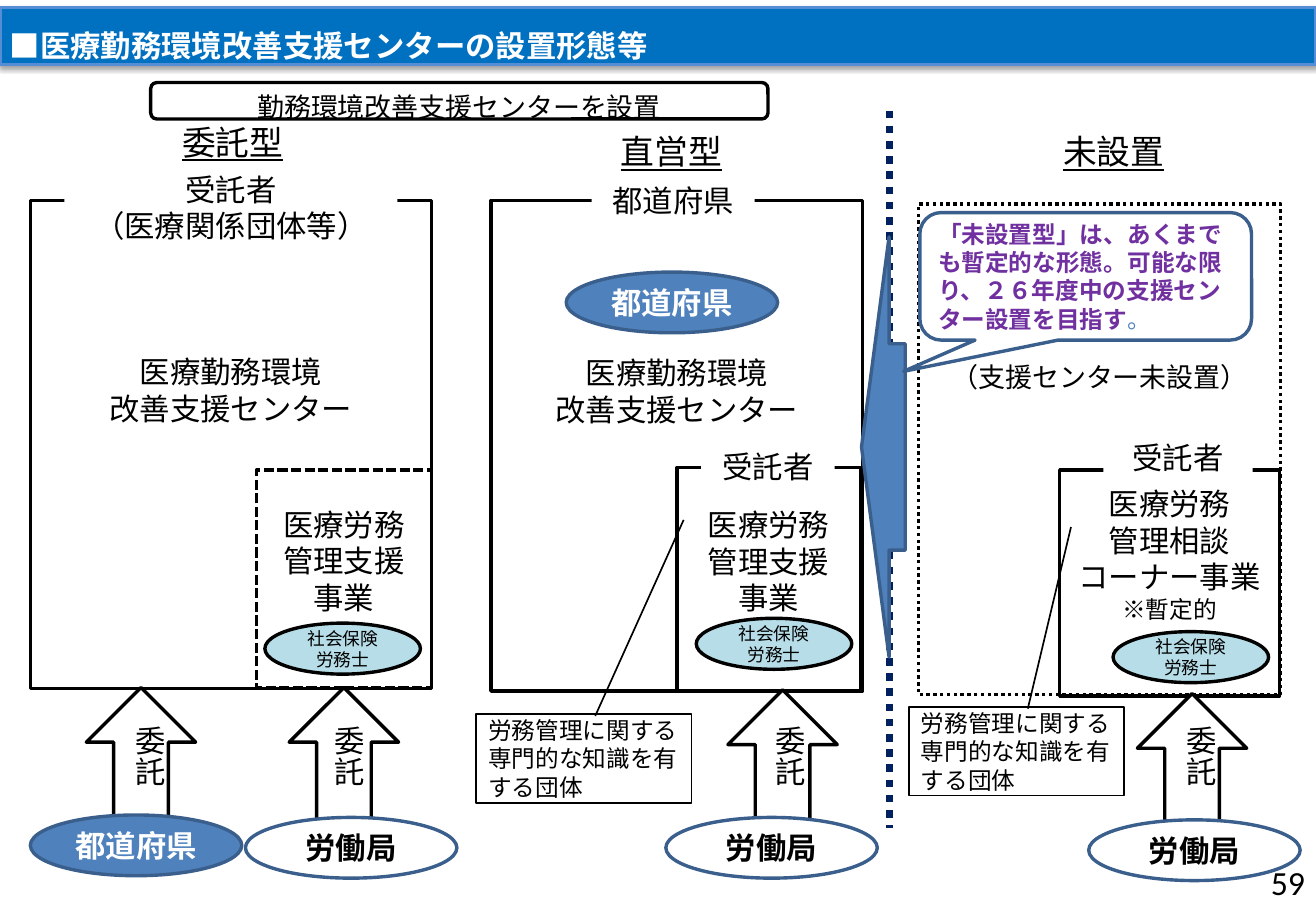
from dataclasses import dataclass
from typing import Any, Optional

from lxml import etree
from pptx import Presentation
from pptx.dml.color import RGBColor
from pptx.enum import dml, shapes, text
from pptx.oxml import ns
from pptx.util import Inches, Pt

JAPANESE = "Noto Sans CJK JP"
BLACK, WHITE, BLUE, EDGE = "000000", "FFFFFF", "4F81BD", "3A5F8C"
KIND = shapes.MSO_SHAPE
DASH = dml.MSO_LINE
LEFT, CENTER, RIGHT = text.PP_ALIGN.LEFT, text.PP_ALIGN.CENTER, text.PP_ALIGN.RIGHT
TOP, MIDDLE = text.MSO_ANCHOR.TOP, text.MSO_ANCHOR.MIDDLE


@dataclass(frozen=True)
class Style:
    size: float = 18
    color: str = BLACK
    bold: bool = False
    underline: bool = False
    align: Any = CENTER
    anchor: Any = MIDDLE
    font: str = JAPANESE


@dataclass(frozen=True)
class Node:
    kind: Any
    at: tuple[float, float, float, float]
    words: str = ""
    fill: Optional[str] = None
    line: Optional[str] = BLACK
    weight: float = 2
    dash: Any = None
    style: Style = Style()
    adjust: tuple[float, ...] = ()
    rotation: float = 0
    flip: bool = False
    lift: float = 0  # room kept free below the text


HEADING = Style(size=20, underline=True, align=LEFT, anchor=TOP)
LABEL = Style(anchor=TOP)
NOTE = Style(size=14, align=LEFT)
EXPERT = Style(size=10.5, font="Calibri")


def hex_color(value: str) -> RGBColor:
    return RGBColor.from_string(value)


def add_xml(parent: Any, tag: str, **attributes: str) -> Any:
    return etree.SubElement(parent, ns.qn(tag), attributes)


def format_para(para: Any, style: Style) -> None:
    para.alignment = style.align
    font = para.font
    font.size, font.bold, font.underline = Pt(style.size), style.bold, style.underline
    font.color.rgb = hex_color(style.color)
    font.name = style.font
    defaults = para._p.pPr.find(ns.qn("a:defRPr"))
    add_xml(defaults, "a:ea", typeface=JAPANESE)


def write(box: Any, words: str, style: Style, wrap: bool = True) -> None:
    frame = box.text_frame
    frame.text = words
    frame.word_wrap = wrap
    frame.auto_size = text.MSO_AUTO_SIZE.NONE
    frame.vertical_anchor = style.anchor
    for para in frame.paragraphs:
        format_para(para, style)


def paint(box: Any, fill: Optional[str], line: Optional[str], weight: float = 2) -> None:
    if fill:
        box.fill.solid()
        box.fill.fore_color.rgb = hex_color(fill)
    else:
        box.fill.background()
    if line:
        box.line.color.rgb = hex_color(line)
        box.line.width = Pt(weight)
    else:
        box.line.fill.background()


def add_node(page: Any, node: Node) -> Any:
    box = page.shapes.add_shape(node.kind, *map(Inches, node.at))
    box.shadow.inherit = False
    paint(box, node.fill, node.line, node.weight)
    if node.dash:
        box.line.dash_style = node.dash
    for index, value in enumerate(node.adjust):
        box.adjustments[index] = value
    box.rotation = node.rotation
    if node.flip:
        box._element.spPr.xfrm.set("flipH", "1")
    if node.words:
        write(box, node.words, node.style)
        box.text_frame.margin_bottom = Inches(0.05 + node.lift)
    return box


def add_words(page: Any, at: tuple, words: str, style: Style, vertical: bool = False) -> None:
    box = page.shapes.add_textbox(*map(Inches, at))
    write(box, words, style, wrap=style.align == RIGHT)
    if vertical:
        box.text_frame._txBody.bodyPr.set("vert", "eaVert")


def add_banner(page: Any, words: str) -> None:
    banner = page.shapes.title
    banner.left, banner.top, banner.width, banner.height = map(Inches, (0, 0.06, 10.83, 0.47))
    paint(banner, "0070C0", "558ED5")
    write(banner, words, Style(color=WHITE, bold=True, align=LEFT, anchor=TOP))
    frame = banner.text_frame
    frame.margin_left = frame.margin_right = Inches(0.08)
    frame.margin_top = frame.margin_bottom = Inches(0.01)
    frame.paragraphs[0].line_spacing = 1.5
    frame.paragraphs[0].space_before = Pt(8)
    effects = add_xml(banner._element.spPr, "a:effectLst")
    shadow = add_xml(effects, "a:outerShdw", blurRad=str(Pt(3.1)), dist=str(Pt(1.6)),
                     dir="5400000", rotWithShape="0")
    add_xml(add_xml(shadow, "a:srgbClr", val=BLACK), "a:alpha", val="38000")


def add_divider(page: Any) -> None:
    ends = map(Inches, (7.32, 0.91, 7.32, 6.82))
    divider = page.shapes.add_connector(shapes.MSO_CONNECTOR.STRAIGHT, *ends)
    divider.line.color.rgb = hex_color("002060")
    divider.line.width = Pt(4.5)
    divider.line.dash_style = DASH.ROUND_DOT
    add_xml(divider._element.spPr, "a:effectLst")


def add_bubble(page: Any) -> None:
    bubble = add_node(page, Node(KIND.ROUNDED_RECTANGULAR_CALLOUT, (7.57, 1.75, 2.73, 1.05),
                                 fill=WHITE, line=EDGE, adjust=(-0.549, 0.745, 0.167)))
    write(bubble, "「未設置型」は、あくまでも暫定的な形態。可能な限り、２６年度中の支援センター設置を目指す",
          Style(size=14, color="7030A0", bold=True, align=LEFT))
    span = bubble.text_frame.paragraphs[0].add_run()
    span.text = "。"
    span.font.bold = False
    span.font.color.rgb = hex_color(BLUE)


def oval(left: float, top: float, words: str, filled: bool = False) -> Node:
    style = Style(color=WHITE if filled else BLACK, bold=True)
    return Node(KIND.OVAL, (left, top, 1.74, 0.5), words, BLUE if filled else WHITE, EDGE, style=style)


CENTRE = "医療勤務環境\n改善支援センター"
FRAMES = [
    Node(KIND.RECTANGLE, (0.25, 1.65, 3.3, 4.02), CENTRE, lift=0.9),
    Node(KIND.RECTANGLE, (4.04, 1.65, 3.06, 4.04), CENTRE, lift=0.9),
    Node(KIND.RECTANGLE, (2.11, 3.87, 1.44, 1.79), "医療労務管理支援事業", dash=DASH.SQUARE_DOT, lift=0.3),
    Node(KIND.RECTANGLE, (5.57, 3.85, 1.51, 1.84), "医療労務\n管理支援\n事業", lift=0.3),
    Node(KIND.RECTANGLE, (7.56, 1.68, 2.98, 4.04), "（支援センター未設置）", dash=DASH.ROUND_DOT,
         style=Style(size=16), lift=1.2),
    Node(KIND.RECTANGLE, (8.72, 3.87, 1.81, 1.86), "医療労務\n管理相談\nコーナー事業\n※暫定的", lift=0.47),
]
LABELS = [
    Node(KIND.RECTANGLE, at, words, WHITE, None, style=LABEL)
    for at, words in (
        ((0.53, 1.36, 2.74, 0.71), "受託者\n（医療関係団体等）"),
        ((5.77, 3.64, 1.1, 0.4), "受託者"),
        ((4.87, 1.45, 1.34, 0.4), "都道府県"),
        ((9.08, 3.57, 1.23, 0.4), "受託者"),
    )
]
NOTES = [
    Node(KIND.LINE_CALLOUT_1, (left, top, 1.77, 0.73), "労務管理に関する専門的な知識を有する団体",
         WHITE, weight=1, style=NOTE, adjust=(*tip, 0.02, 0.447), flip=True)
    for left, top, tip in ((3.92, 5.88, (-2.192, 0.036)), (7.48, 5.82, (-2.03, 0.246)))
]
ENTRUST_ARROWS = [(0.71, 5.66, 0.93), (2.38, 5.66, 2.57), (5.99, 5.68, 6.2), (9.36, 5.71, 9.58)]
OVALS = [oval(0.25, 6.71, "都道府県", True), oval(4.66, 2.24, "都道府県", True)]
OVALS += [oval(left, top, "労働局") for left, top in ((2.02, 6.73), (5.48, 6.73), (8.96, 6.75))]
EXPERTS = [
    Node(KIND.OVAL, (left, top, 1.28, 0.42), "社会保険労務士", "B7DEE8", style=EXPERT)
    for left, top in ((2.18, 5.13), (5.73, 5.09), (9.16, 5.2))
]


def main() -> None:
    deck = Presentation()
    deck.slide_width, deck.slide_height = Inches(10.83), Inches(7.5)
    page = deck.slides.add_slide(deck.slide_layouts[5])
    add_banner(page, "■医療勤務環境改善支援センターの設置形態等")
    for left, top, words in ((1.4, 0.95, "委託型"), (5.01, 1.03, "直営型"), (8.65, 1.03, "未設置")):
        add_words(page, (left, top, 1.04, 0.44), words, HEADING)
    for node in FRAMES:
        frame = add_node(page, node)
    frame.text_frame.paragraphs[-1].font.size = Pt(14)
    for node in LABELS:
        add_node(page, node)
    for left, top, caption_left in ENTRUST_ARROWS:
        add_node(page, Node(KIND.DOWN_ARROW, (left, top, 0.9, 1.28), fill=WHITE, rotation=180))
        add_words(page, (caption_left, 5.88, 0.5, 0.61), "委託", Style(align=LEFT, anchor=TOP), vertical=True)
    for node in NOTES:
        add_node(page, node)
    add_divider(page)
    add_node(page, Node(KIND.LEFT_ARROW, (7.09, 1.95, 0.36, 3.46), fill=BLUE, line=EDGE, adjust=(0.491, 0.631)))
    add_bubble(page)
    setup = Node(KIND.ROUNDED_RECTANGLE, (1.24, 0.68, 5.08, 0.3), "勤務環境改善支援センターを設置",
                 WHITE, style=Style(size=16, anchor=TOP))
    for node in (*OVALS, setup, *EXPERTS):
        add_node(page, node)
    add_words(page, (8.31, 7.06, 2.53, 0.4), "59", Style(size=20, align=RIGHT, font="Calibri"))
    deck.save("out.pptx")


if __name__ == "__main__":
    main()
